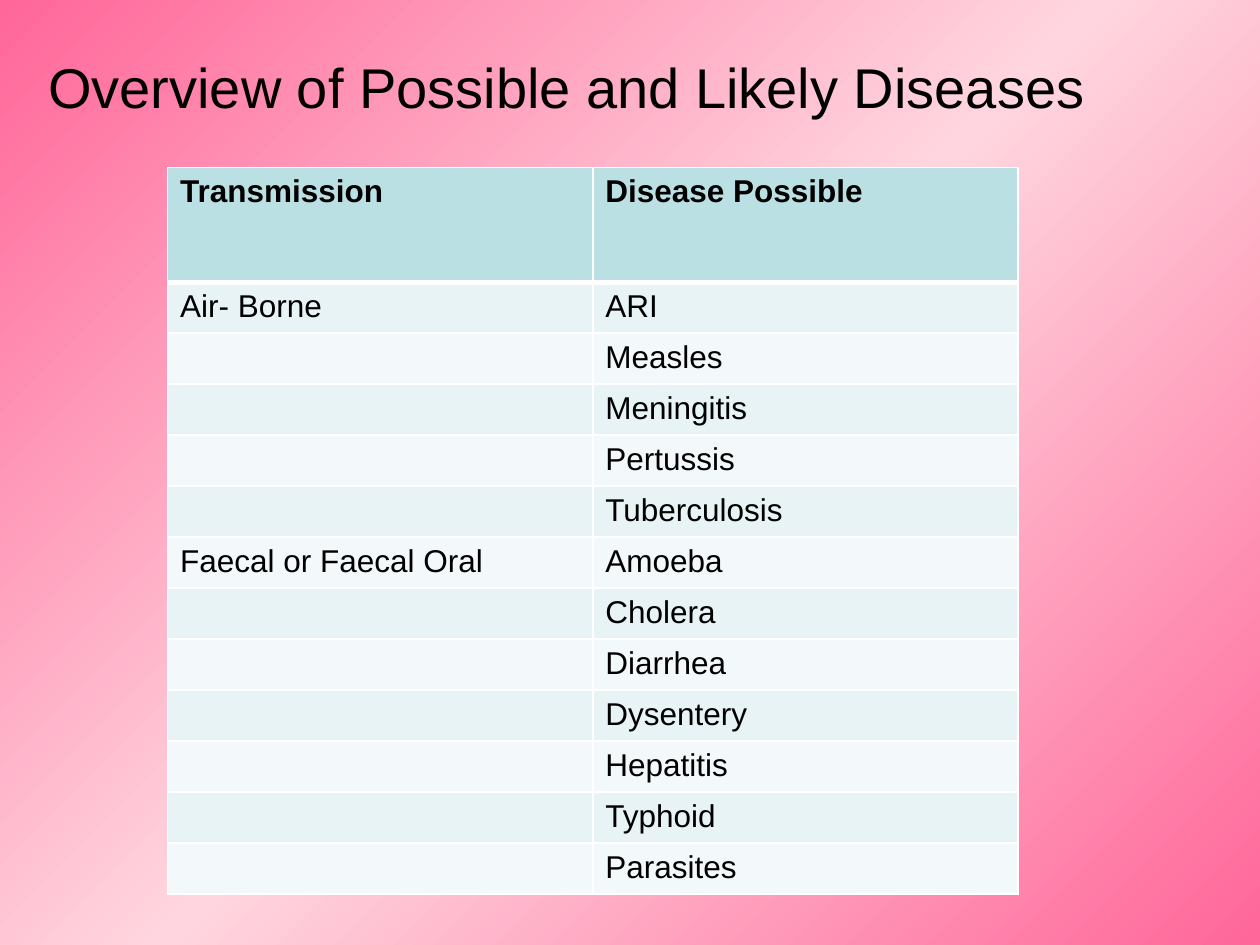
import copy

import pptx
import pptx.dml.color
import pptx.enum.text
import pptx.oxml
import pptx.oxml.ns
import pptx.util
from pptx.util import Inches

RGBColor = pptx.dml.color.RGBColor
PINK = RGBColor(0xFF, 0x66, 0x99)
PALE_PINK = RGBColor(0xFF, 0xD6, 0xDF)
BLACK = RGBColor(0x00, 0x00, 0x00)
WHITE = RGBColor(0xFF, 0xFF, 0xFF)
HEADER_FILL = RGBColor(0xBB, 0xE0, 0xE3)
BAND_FILLS = (RGBColor(0xE7, 0xF3, 0xF4), RGBColor(0xF3, 0xF9, 0xFA))

HEADINGS = ("Transmission", "Disease Possible")
DISEASES = {
    "Air- Borne": ("ARI", "Measles", "Meningitis", "Pertussis", "Tuberculosis"),
    "Faecal or Faecal Oral": ("Amoeba", "Cholera", "Diarrhea", "Dysentery",
                              "Hepatitis", "Typhoid", "Parasites"),
}


def set_font(p, size, bold=False):
    p.font.name = "Arial"
    p.font.size = pptx.util.Pt(size)
    p.font.bold = bold
    p.font.color.rgb = BLACK


def paint_background(slide):
    fill = slide.background.fill
    fill.gradient()
    fill.gradient_angle = 315  # counter-clockwise: runs to the lower right
    stops = fill.gradient_stops
    first = stops[0]._gs
    first.addnext(copy.deepcopy(first))
    for stop, position, color in zip(fill.gradient_stops, (0, 0.5, 1),
                                     (PINK, PALE_PINK, PINK)):
        stop.position = position
        stop.color.rgb = color


def add_title(slide, left, top, width, height):
    tf = slide.shapes.add_textbox(left, top, width, height).text_frame
    tf.word_wrap = True
    tf.vertical_anchor = pptx.enum.text.MSO_ANCHOR.MIDDLE
    p = tf.paragraphs[0]
    p.text = "Overview of Possible and Likely Diseases"
    p.alignment = pptx.enum.text.PP_ALIGN.CENTER
    set_font(p, 32)


def set_borders(cell, widths):
    """Draw white borders; widths maps the sides L, R, T, B to points."""
    tc_pr = cell._tc.get_or_add_tcPr()
    for i, (side, width) in enumerate(widths.items()):
        tc_pr.insert(i, pptx.oxml.parse_xml(
            f'<a:ln{side} {pptx.oxml.ns.nsdecls("a")} w="{pptx.util.Pt(width)}">'
            f'<a:solidFill><a:srgbClr val="{WHITE}"/></a:solidFill></a:ln{side}>'))


def add_disease_table(slide, left, top, width, height):
    rows = [HEADINGS]
    for transmission, diseases in DISEASES.items():
        rows += [(transmission if i == 0 else "", disease)
                 for i, disease in enumerate(diseases)]

    table = slide.shapes.add_table(len(rows), len(HEADINGS),
                                   left, top, width, height).table
    table.first_row = table.horz_banding = False
    header_height = Inches(0.91)
    row_height = (height - header_height) // (len(rows) - 1)

    for r, texts in enumerate(rows):
        header = r == 0
        table.rows[r].height = header_height if header else row_height
        for c, text in enumerate(texts):
            cell = table.cell(r, c)
            cell.fill.solid()
            cell.fill.fore_color.rgb = HEADER_FILL if header else BAND_FILLS[(r - 1) % 2]
            set_borders(cell, {"L": 1, "R": 1, "T": 3 if r == 1 else 1,
                               "B": 3 if header else 1})
            p = cell.text_frame.paragraphs[0]
            p.text = text
            set_font(p, 18, bold=header)


def main():
    prs = pptx.Presentation()
    prs.slide_width, prs.slide_height = Inches(10), Inches(7.5)
    slide = prs.slides.add_slide(prs.slide_layouts[6])
    paint_background(slide)
    add_title(slide, Inches(0), Inches(0.25), Inches(9), Inches(0.87))
    add_disease_table(slide, Inches(1.33), Inches(1.33), Inches(6.75), Inches(5.77))
    prs.save("out.pptx")


if __name__ == "__main__":
    main()
